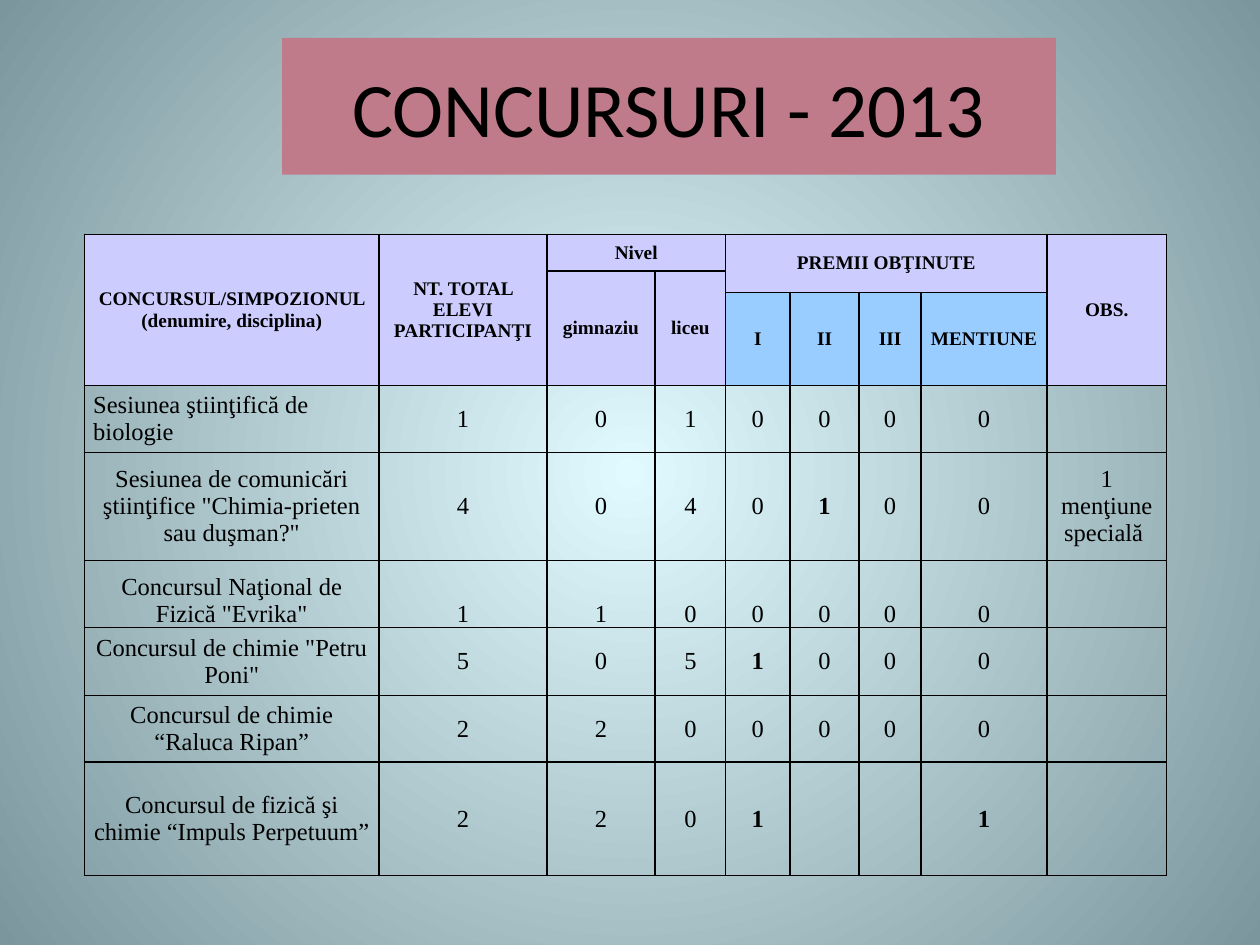
import dataclasses

import lxml.etree
import pptx
import pptx.dml.color
import pptx.enum.shapes
import pptx.enum.text
import pptx.oxml
import pptx.oxml.ns
import pptx.util

RGBColor = pptx.dml.color.RGBColor
ANCHOR = pptx.enum.text.MSO_ANCHOR
ALIGN = pptx.enum.text.PP_ALIGN
qn = pptx.oxml.ns.qn

BLACK = RGBColor(0x00, 0x00, 0x00)
ROSE = RGBColor(0xC0, 0x7B, 0x8A)
LAVENDER = RGBColor(0xCC, 0xCC, 0xFF)
SKY = RGBColor(0x99, 0xCC, 0xFF)
GLOW = RGBColor(0xE1, 0xFA, 0xFF)
SLATE = RGBColor(0x7B, 0x96, 0x9C)

SLIDE_WIDTH, SLIDE_HEIGHT = pptx.util.Inches(10), pptx.util.Inches(7.5)
COLUMN_WIDTHS = [2.34, 1.33, 0.86, 0.56, 0.51, 0.55, 0.49, 1, 0.95]
ROW_HEIGHTS = [0.29, 0.04, 0.74, 0.53, 0.86, 0.53, 0.54, 0.53, 0.9]
HEADER_ROWS = 3
PRIZE_COLUMNS = range(4, 8)
HEADER_FONT = {"name": "Times New Roman", "size": pptx.util.Pt(11), "bold": True}
BODY_FONT = {"name": "Times New Roman", "size": pptx.util.Pt(14), "bold": False}


@dataclasses.dataclass
class Area:
    """A place on the slide, in shares of its width and height."""
    left: float
    top: float
    width: float
    height: float

    def lengths(self) -> list[int]:
        return [int(self.left * SLIDE_WIDTH), int(self.top * SLIDE_HEIGHT),
                int(self.width * SLIDE_WIDTH), int(self.height * SLIDE_HEIGHT)]


@dataclasses.dataclass
class Heading:
    text: str
    row: int
    column: int
    rows: int = 1
    columns: int = 1
    fill: RGBColor = LAVENDER


@dataclasses.dataclass
class Contest:
    name: str
    counts: str  # one figure per column, "-" for none
    remark: str = ""
    align: ALIGN = ALIGN.CENTER
    anchor: ANCHOR = ANCHOR.MIDDLE


TITLE_AREA = Area(0.224, 0.04, 0.614, 0.145)
TABLE_AREA = Area(0.067, 0.248, 0.858, 0.661)

HEADINGS = [
    Heading("CONCURSUL/SIMPOZIONUL (denumire, disciplina)", 0, 0, rows=3),
    Heading("NT. TOTAL ELEVI PARTICIPANŢI", 0, 1, rows=3),
    Heading("Nivel", 0, 2, columns=2),
    Heading("gimnaziu", 1, 2, rows=2),
    Heading("liceu", 1, 3, rows=2),
    Heading("PREMII OBŢINUTE", 0, 4, rows=2, columns=4),
    *[Heading(prize, 2, column, fill=SKY)
      for prize, column in zip(["I", "II", "III", "MENTIUNE"], PRIZE_COLUMNS)],
    Heading("OBS.", 0, 8, rows=3),
]
CONTESTS = [
    Contest("Sesiunea ştiinţifică de biologie", "1010000", align=ALIGN.LEFT),
    Contest('Sesiunea de comunicări ştiinţifice "Chimia-prieten sau duşman?"',
            "4040100", "1 menţiune specială "),
    Contest('Concursul Naţional de Fizică "Evrika"', "1100000", anchor=ANCHOR.BOTTOM),
    Contest('Concursul de chimie "Petru Poni"', "5051000"),
    Contest("Concursul de chimie “Raluca Ripan”", "2200000"),
    Contest("Concursul de fizică şi chimie “Impuls Perpetuum”", "2201--1"),
]


def apply(target, formats: dict) -> None:
    for attribute, value in formats.items():
        setattr(target, attribute, value)


def write(frame, text: str, align: ALIGN, font: dict) -> None:
    paragraph = frame.paragraphs[0]
    paragraph.alignment = align
    run = paragraph.add_run()
    run.text = text
    apply(run.font, font)
    run.font.color.rgb = BLACK


def paint_background(slide) -> None:
    fill = slide.background.fill
    fill.gradient()
    for stop, color in zip(fill.gradient_stops, [GLOW, SLATE]):
        stop.color.rgb = color
    gradient = slide.element.find(".//" + qn("a:gradFill"))
    gradient.remove(gradient.find(qn("a:lin")))
    circle = lxml.etree.SubElement(gradient, qn("a:path"), path="circle")
    lxml.etree.SubElement(circle, qn("a:fillToRect"),
                          dict.fromkeys("ltrb", "50000"))


def add_title(slide, text: str) -> None:
    banner = slide.shapes.add_shape(pptx.enum.shapes.MSO_SHAPE.RECTANGLE,
                                    *TITLE_AREA.lengths())
    banner.shadow.inherit = False
    banner.fill.solid()
    banner.fill.fore_color.rgb = ROSE
    banner.line.fill.background()
    apply(banner.text_frame, {"word_wrap": True, "vertical_anchor": ANCHOR.MIDDLE})
    write(banner.text_frame, text, ALIGN.CENTER,
          {"name": "Calibri", "size": pptx.util.Pt(44)})


def prepare_cell(cell) -> None:
    """Black borders, tight margins, no fill and a small empty line."""
    apply(cell, {"margin_left": pptx.util.Inches(0.07), "margin_top": 0,
                 "margin_right": pptx.util.Inches(0.07), "margin_bottom": 0})
    properties = cell._tc.get_or_add_tcPr()
    for side in "LRTB":
        line = lxml.etree.SubElement(properties, qn(f"a:ln{side}"),
                                     w=str(pptx.util.Pt(1)))
        solid = lxml.etree.SubElement(line, qn("a:solidFill"))
        lxml.etree.SubElement(solid, qn("a:srgbClr"), val=str(BLACK))
    cell.fill.background()
    lxml.etree.SubElement(cell.text_frame.paragraphs[0]._p,
                          qn("a:endParaRPr"), sz="1100")


def fill_heading(table, heading: Heading) -> None:
    cell = table.cell(heading.row, heading.column)
    if heading.rows > 1 or heading.columns > 1:
        cell.merge(table.cell(heading.row + heading.rows - 1,
                              heading.column + heading.columns - 1))
    cell.fill.solid()
    cell.fill.fore_color.rgb = heading.fill
    cell.vertical_anchor = ANCHOR.MIDDLE
    write(cell.text_frame, heading.text, ALIGN.CENTER, HEADER_FONT)


def fill_contest(table, row: int, contest: Contest) -> None:
    texts = [contest.name, *contest.counts.replace("-", " "), contest.remark]
    for column, text in enumerate(texts):
        if not text.strip():
            continue
        cell = table.cell(row, column)
        cell.vertical_anchor = contest.anchor
        won = column in PRIZE_COLUMNS and text != "0"
        write(cell.text_frame, text, ALIGN.CENTER if column else contest.align,
              {**BODY_FONT, "bold": won})


def add_results(slide) -> None:
    table = slide.shapes.add_table(len(ROW_HEIGHTS), len(COLUMN_WIDTHS),
                                   *TABLE_AREA.lengths()).table
    apply(table, {"first_row": False, "horz_banding": False})
    for column, width in zip(table.columns, COLUMN_WIDTHS):
        column.width = pptx.util.Inches(width)
    for row, height in zip(table.rows, ROW_HEIGHTS):
        row.height = pptx.util.Inches(height)
    for cell in table.iter_cells():
        prepare_cell(cell)
    for heading in HEADINGS:
        fill_heading(table, heading)
    for row, contest in enumerate(CONTESTS, HEADER_ROWS):
        fill_contest(table, row, contest)


def main() -> None:
    deck = pptx.Presentation()
    apply(deck, {"slide_width": SLIDE_WIDTH, "slide_height": SLIDE_HEIGHT})
    slide = deck.slides.add_slide(deck.slide_layouts[6])
    paint_background(slide)
    add_title(slide, "CONCURSURI - 2013")
    add_results(slide)
    deck.save("out.pptx")


if __name__ == "__main__":
    main()
